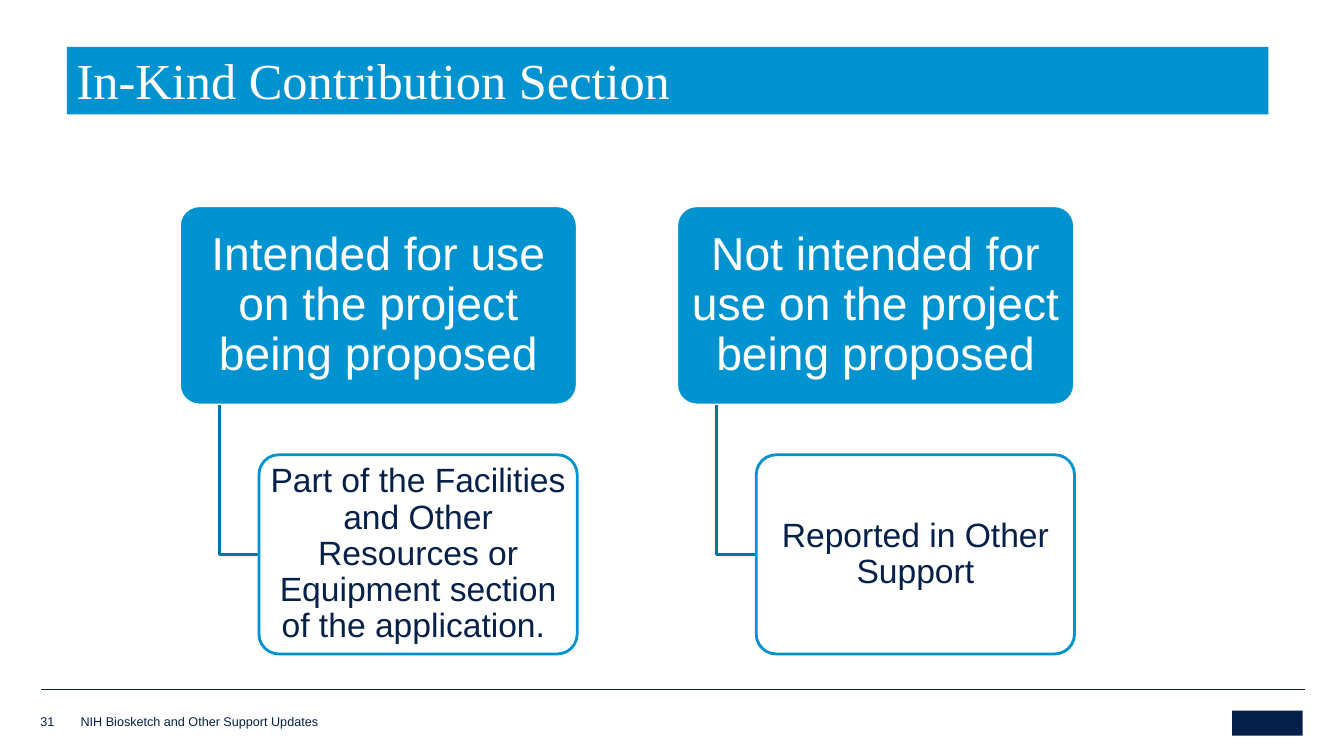
from pptx import Presentation
from pptx.dml.color import RGBColor
from pptx.enum.shapes import MSO_CONNECTOR as Connector, MSO_SHAPE as Shape
from pptx.enum.text import MSO_ANCHOR as Anchor, PP_ALIGN as Align
from pptx.oxml.ns import qn
from pptx.util import Inches, Pt
from lxml.etree import SubElement

# Diagram grid, in percent of the slide's width and height
LEFT, TOP = 13.35, 27.22
COLUMN, ROW = 2.96, 5.27
BRANCH_STEP = 12.5 * COLUMN

BRANCHES = [
    ("Intended for use on the project being proposed",
     "Part of the Facilities and Other Resources or Equipment section of the application. "),
    ("Not intended for use on the project being proposed",
     "Reported in Other Support"),
]


def color(value):
    return RGBColor.from_string(value)


class SlideBuilder:
    """Holds the style and the slide; positions are percent of the slide's size."""
    BLUE, DARK_BLUE, NAVY, WHITE = "0093D0", "0076A7", "052049", "FFFFFF"
    SANS, SERIF = "Arial", "Times New Roman"

    def __init__(self, presentation):
        self.width = presentation.slide_width
        self.height = presentation.slide_height
        self.slide = presentation.slides.add_slide(presentation.slide_layouts[6])

    def place(self, x, y):
        return round(self.width * x / 100), round(self.height * y / 100)

    def box(self, left, top, width, height):
        return *self.place(left, top), *self.place(width, height)

    def add_text(self, shape, text, size, ink, font=SANS, align=Align.LEFT,
                 anchor=Anchor.BOTTOM, spacing=1.0, insets=(0, 0)):
        frame = shape.text_frame
        frame.word_wrap = True
        frame.vertical_anchor = anchor
        frame.margin_left = frame.margin_right = Inches(insets[0])
        frame.margin_top = frame.margin_bottom = Inches(insets[1])
        paragraph = frame.paragraphs[0]
        paragraph.alignment = align
        paragraph.line_spacing = spacing
        run = paragraph.add_run()
        run.text = text
        run.font.size = Pt(size)
        run.font.name = font
        run.font.color.rgb = color(ink)

    def label(self, area, text):
        self.add_text(self.slide.shapes.add_textbox(*self.box(*area)), text, 9, self.NAVY)

    def panel(self, kind, area, fill, outline=None):
        shape = self.slide.shapes.add_shape(kind, *self.box(*area))
        shape.shadow.inherit = False
        shape.fill.solid()
        shape.fill.fore_color.rgb = color(fill)
        if outline:
            shape.line.color.rgb = color(outline)
            shape.line.width = Pt(2)
        else:
            shape.line.fill.background()
        return shape

    def card(self, area, text, size, ink, fill, outline, insets):
        shape = self.panel(Shape.ROUNDED_RECTANGLE, area, fill, outline)
        shape.adjustments[0] = 0.1
        self.add_text(shape, text, size, ink, align=Align.CENTER,
                      anchor=Anchor.MIDDLE, spacing=0.9, insets=insets)
        return shape

    def elbow(self, *points):
        start, *rest = [self.place(*point) for point in points]
        builder = self.slide.shapes.build_freeform(*start)
        builder.add_line_segments(rest, close=False)
        shape = builder.convert_to_shape()
        shape.shadow.inherit = False
        shape.fill.background()
        shape.line.color.rgb = color(self.DARK_BLUE)
        shape.line.width = Pt(2)

    def rule(self, start, end):
        line = self.slide.shapes.add_connector(
            Connector.STRAIGHT, *self.place(*start), *self.place(*end))
        line.line.color.rgb = color(self.NAVY)
        line.line.width = Pt(0.25)
        SubElement(line.element.spPr, qn("a:effectLst"))

    def branch(self, left, heading, detail):
        # Elbow from the heading's bottom edge to the detail's left side
        stem, detail_left = left + COLUMN, left + 2 * COLUMN
        bottom, detail_top = TOP + 5 * ROW, TOP + 6.25 * ROW
        middle = detail_top + 2.5 * ROW
        self.card((left, TOP, 10 * COLUMN, 5 * ROW), heading, 33,
                  self.WHITE, self.BLUE, self.WHITE, (0.07, 0.04))
        self.elbow((stem, bottom), (stem, middle), (detail_left, middle))
        card = self.card((detail_left, detail_top, 8 * COLUMN, 5 * ROW), detail, 24,
                         self.NAVY, self.WHITE, self.BLUE, (0.05, 0.03))
        fill_color = card.element.spPr.find(qn("a:solidFill"))[0]
        SubElement(fill_color, qn("a:alpha"), val="90000")


def main():
    presentation = Presentation()
    presentation.slide_width = Inches(13.33)
    presentation.slide_height = Inches(7.5)
    page = SlideBuilder(presentation)

    # Footer, with a plain block at the right end
    page.rule((3.08, 91.2), (97.07, 91.2))
    page.panel(Shape.RECTANGLE, (91.67, 94, 5.25, 3.33), page.NAVY)
    page.label((6, 94.4, 47.19, 2), "NIH Biosketch and Other Support Updates")
    page.label((3, 94.13, 2.7, 2.27), "31")

    # Title bar
    title = page.panel(Shape.RECTANGLE, (4.97, 6.2, 89.4, 8.93), page.BLUE)
    page.add_text(title, "In-Kind Contribution Section", 36, page.WHITE,
                  font=page.SERIF, spacing=0.85, insets=(0.1, 0.05))

    # Diagram
    for index, (heading, detail) in enumerate(BRANCHES):
        page.branch(LEFT + index * BRANCH_STEP, heading, detail)

    presentation.save("out.pptx")


if __name__ == "__main__":
    main()
